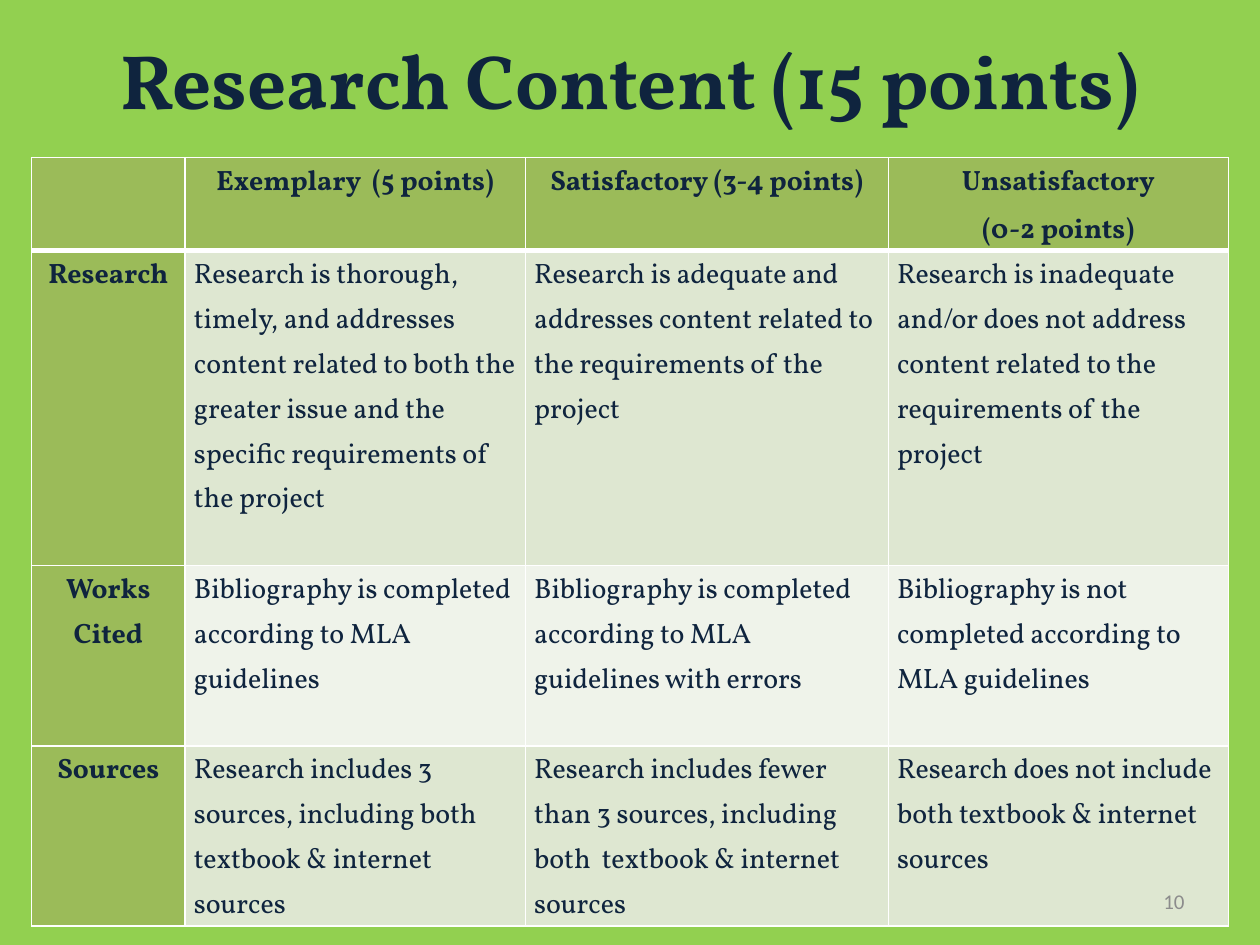
from dataclasses import dataclass

from lxml.etree import SubElement
from pptx import Presentation
from pptx.dml.color import RGBColor
from pptx.enum.text import MSO_ANCHOR, PP_ALIGN
from pptx.oxml.ns import qn
from pptx.util import Inches, Pt

SLIDE_WIDTH, SLIDE_HEIGHT = Inches(10), Inches(7.5)


@dataclass(frozen=True)
class Theme:
    background: str = "92D050"
    ink: str = "0F243E"
    accent: str = "9BBB59"
    bands: tuple[str, str] = ("DEE7D1", "EFF3EA")
    border: str = "FFFFFF"
    muted: str = "8C8C8C"
    font: str = "Vollkorn"
    number_font: str = "Calibri"
    title_size: int = 44
    table_size: int = 16
    number_size: int = 12
    thin: int = 1
    thick: int = 3
    line_spacing: float = 1.15


@dataclass(frozen=True)
class Style:
    font: str
    size: int
    color: str
    bold: bool
    align: PP_ALIGN


@dataclass(frozen=True)
class Label:
    text: str
    left: float
    top: float
    width: float
    height: float
    style: Style


@dataclass(frozen=True)
class Criterion:
    name: str
    levels: tuple[str, str, str]
    height: float


THEME = Theme()
HEADING = Style(THEME.font, THEME.table_size, THEME.ink, True, PP_ALIGN.CENTER)
BODY = Style(THEME.font, THEME.table_size, THEME.ink, False, PP_ALIGN.LEFT)
TITLE = Style(THEME.font, THEME.title_size, THEME.ink, True, PP_ALIGN.CENTER)
NUMBER = Style(THEME.number_font, THEME.number_size, THEME.muted, False, PP_ALIGN.RIGHT)

LABELS = (
    Label("Research Content (15 points)", 0.05, 0, 0.9, 1 / 6, TITLE),
    Label("10", 0.717, 0.927, 0.233, 0.053, NUMBER),
)
COLUMN_WIDTHS = (1.22, 2.7, 2.88, 2.7)
RUBRIC = (
    Criterion("", (
        "Exemplary  (5 points)",
        "Satisfactory (3-4 points)",
        "Unsatisfactory\n(0-2 points)",
    ), 0.74),
    Criterion("Research", (
        "Research is thorough, timely, and addresses content related to both "
        "the greater issue and the specific requirements of the project",
        "Research is adequate and addresses content related to the "
        "requirements of the project",
        "Research is inadequate and/or does not address content related to "
        "the requirements of the project",
    ), 2.5),
    Criterion("Works Cited", (
        "Bibliography is completed according to MLA guidelines",
        "Bibliography is completed according to MLA guidelines with errors",
        "Bibliography is not completed according to MLA guidelines",
    ), 1.43),
    Criterion("Sources", (
        "Research includes 3 sources, including both textbook & internet sources",
        "Research includes fewer than 3 sources, including both  textbook & "
        "internet sources",
        "Research does not include both textbook & internet sources",
    ), 1.43),
)


def write(frame, text: str, style: Style) -> None:
    frame.text = text
    for paragraph in frame.paragraphs:
        paragraph.alignment = style.align
        for run in paragraph.runs:
            run.font.name = style.font
            run.font.size = Pt(style.size)
            run.font.bold = style.bold
            run.font.color.rgb = RGBColor.from_string(style.color)


def draw_label(slide, label: Label) -> None:
    box = slide.shapes.add_textbox(
        int(label.left * SLIDE_WIDTH), int(label.top * SLIDE_HEIGHT),
        int(label.width * SLIDE_WIDTH), int(label.height * SLIDE_HEIGHT))
    box.text_frame.word_wrap = True
    box.text_frame.vertical_anchor = MSO_ANCHOR.MIDDLE
    write(box.text_frame, label.text, label.style)


def draw_borders(cell, top: int, bottom: int) -> None:
    properties = cell._tc.get_or_add_tcPr()
    edges = {"L": THEME.thin, "R": THEME.thin, "T": top, "B": bottom}
    for edge, points in edges.items():
        line = SubElement(properties, qn(f"a:ln{edge}"), w=str(Pt(points)))
        fill = SubElement(line, qn("a:solidFill"))
        SubElement(fill, qn("a:srgbClr"), val=THEME.border)


def draw_cell(cell, text: str, row: int, column: int) -> None:
    is_header = row == 0
    is_heading = is_header or column == 0
    draw_borders(cell, THEME.thick if row == 1 else THEME.thin,
                 THEME.thick if is_header else THEME.thin)
    cell.fill.solid()
    cell.fill.fore_color.rgb = RGBColor.from_string(
        THEME.accent if is_heading else THEME.bands[(row - 1) % 2])
    cell.margin_left = cell.margin_right = Inches(0.07)
    cell.margin_top = cell.margin_bottom = 0
    write(cell.text_frame, text, HEADING if is_heading else BODY)
    for paragraph in cell.text_frame.paragraphs:
        paragraph.line_spacing = THEME.line_spacing
        paragraph.space_before = Pt(2 if is_header else 0)


def draw_rubric(slide) -> None:
    table = slide.shapes.add_table(
        len(RUBRIC), len(COLUMN_WIDTHS), Inches(0.25), Inches(1.25),
        Inches(sum(COLUMN_WIDTHS)),
        Inches(sum(criterion.height for criterion in RUBRIC))).table
    for column, width in zip(table.columns, COLUMN_WIDTHS):
        column.width = Inches(width)
    for row, criterion in enumerate(RUBRIC):
        table.rows[row].height = Inches(criterion.height)
        for column, text in enumerate((criterion.name, *criterion.levels)):
            draw_cell(table.cell(row, column), text, row, column)


def main() -> None:
    presentation = Presentation()
    presentation.slide_width, presentation.slide_height = SLIDE_WIDTH, SLIDE_HEIGHT
    slide = presentation.slides.add_slide(presentation.slide_layouts[6])
    slide.background.fill.solid()
    slide.background.fill.fore_color.rgb = RGBColor.from_string(THEME.background)
    title, page_number = LABELS
    draw_label(slide, title)
    draw_rubric(slide)
    draw_label(slide, page_number)
    presentation.save("out.pptx")


if __name__ == "__main__":
    main()
